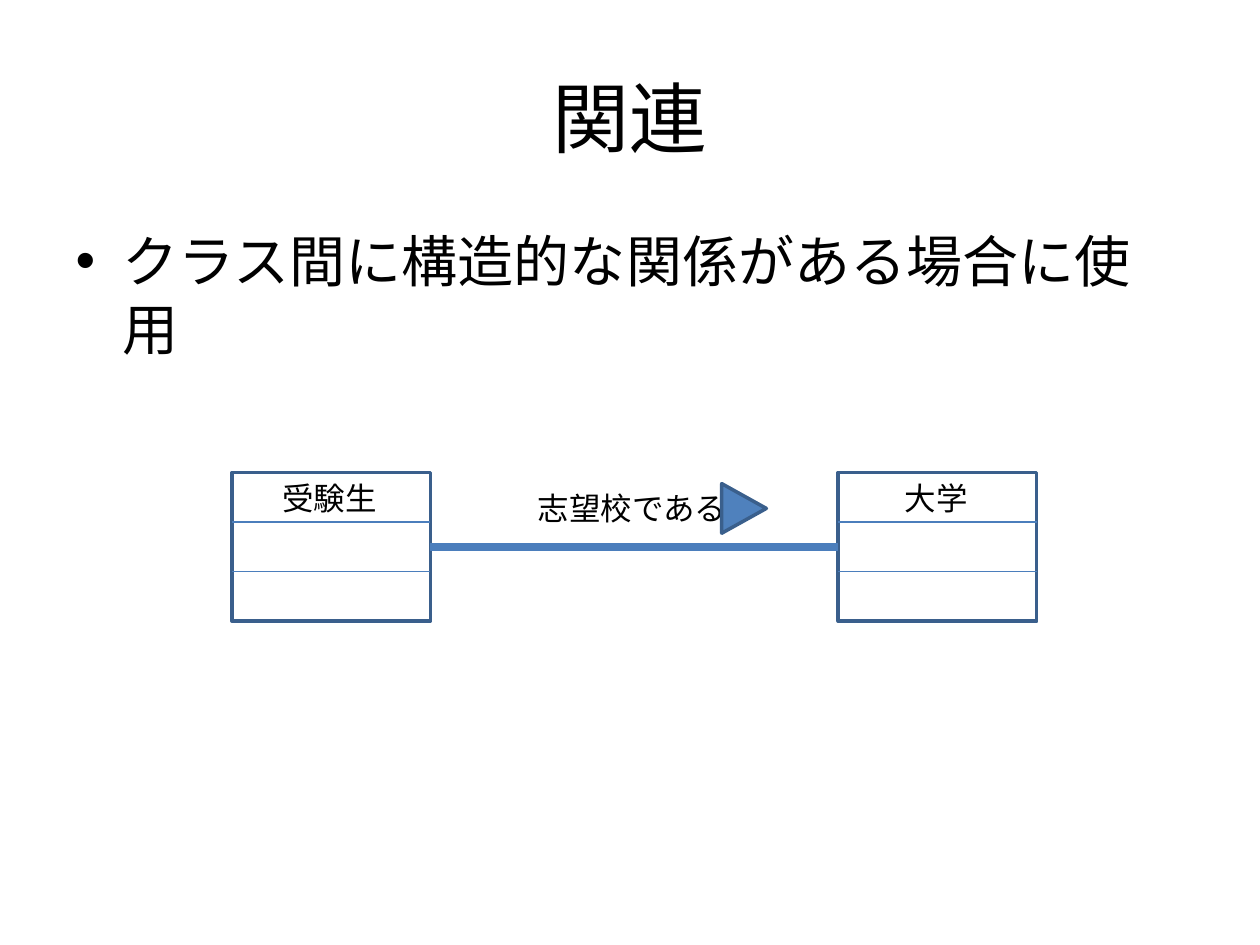
import pptx
import pptx.util
import pptx.dml.color
import pptx.enum.shapes
import pptx.enum.text
import pptx.oxml.ns
import lxml.etree

Pt = pptx.util.Pt
SHAPE = pptx.enum.shapes.MSO_SHAPE
BLUE, EDGE, LINE, BLACK = "4F81BD", "3A5F8C", "4B7EBC", "000000"


def color(hex_string):
    return pptx.dml.color.RGBColor.from_string(hex_string)


def add_line(x1, x2, y, weight):
    """Draw a horizontal line without a shadow."""
    c = s.shapes.add_connector(
        pptx.enum.shapes.MSO_CONNECTOR.STRAIGHT, Pt(x1), Pt(y), Pt(x2), Pt(y))
    c.line.color.rgb = color(LINE)
    c.line.width = Pt(weight)
    sp_pr = c.element.find(pptx.oxml.ns.qn("p:spPr"))
    lxml.etree.SubElement(sp_pr, pptx.oxml.ns.qn("a:effectLst"))


prs = pptx.Presentation()
prs.slide_width, prs.slide_height = Pt(720), Pt(540)
s = prs.slides.add_slide(prs.slide_layouts[1])

# Title and list
title, body = s.placeholders
for sp, text, size, top, height in [
    (title, "関連", 44, 21.6, 90),
    (body, "クラス間に構造的な関係がある場合に使用", 32, 126, 356.4),
]:
    sp.left, sp.top, sp.width, sp.height = Pt(36), Pt(top), Pt(648), Pt(height)
    p = sp.text_frame.paragraphs[0]
    p.text = text
    p.font.size = Pt(size)
    p.font.name = "Calibri"
    p.font.color.rgb = color(BLACK)

# Class boxes with three compartments each
box_top, box_width, row_height = 270, 113.4, 28.35
student_left, university_left = 132.6, 479
for left in (student_left, university_left):
    sp = s.shapes.add_shape(
        SHAPE.RECTANGLE, Pt(left), Pt(box_top), Pt(box_width), Pt(3 * row_height))
    sp.shadow.inherit = False
    sp.fill.background()
    sp.line.color.rgb = color(EDGE)
    sp.line.width = Pt(2)
    for row in (1, 2):
        add_line(left, left + box_width, box_top + row * row_height, 0.75)

# Association between the classes
add_line(student_left + box_width, university_left, box_top + 1.5 * row_height, 4.5)

# Class names and association label
for text, left, top, width in [
    ("受験生", 154.1, box_top, 71.4),
    ("大学", 509.8, box_top, 71.4),
    ("志望校である", 300.2, 275.7, 124.8),
]:
    tf = s.shapes.add_textbox(Pt(left), Pt(top), Pt(width), Pt(29)).text_frame
    tf.word_wrap = True
    tf.auto_size = pptx.enum.text.MSO_AUTO_SIZE.SHAPE_TO_FIT_TEXT
    p = tf.paragraphs[0]
    p.text = text
    p.font.size = Pt(18)
    p.font.name = "Calibri"
    p.font.color.rgb = color(BLACK)

# Reading direction of the association
sp = s.shapes.add_shape(
    SHAPE.ISOSCELES_TRIANGLE, Pt(411), Pt(277.8), Pt(28.35), Pt(25.5))
sp.rotation = 90
sp.shadow.inherit = False
sp.fill.solid()
sp.fill.fore_color.rgb = color(BLUE)
sp.line.color.rgb = color(EDGE)
sp.line.width = Pt(2)

prs.save("out.pptx")
